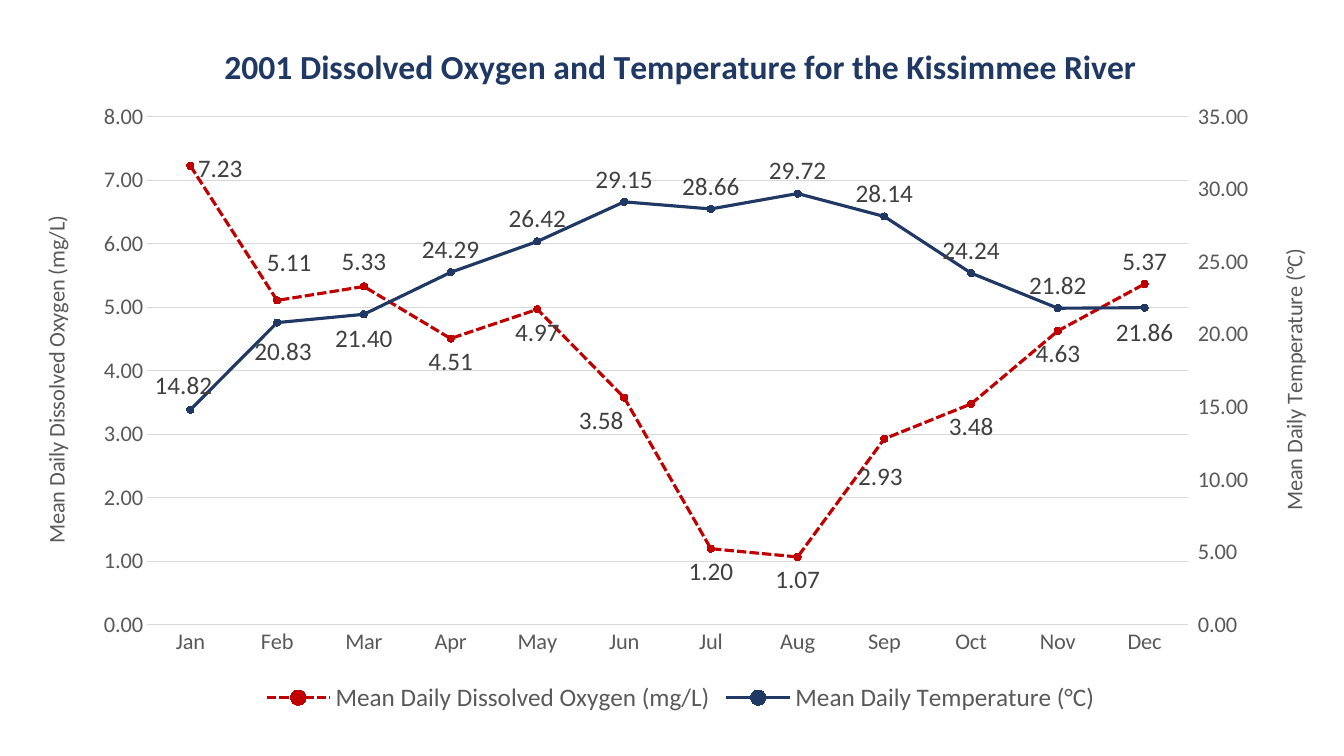
from copy import deepcopy
from dataclasses import dataclass, field

from lxml import etree
from pptx import Presentation
from pptx.chart.axis import CategoryAxis, ValueAxis
from pptx.chart.chart import Chart
from pptx.chart.data import CategoryChartData
from pptx.chart.series import LineSeries
from pptx.dml.color import RGBColor
from pptx.enum.chart import XL_CHART_TYPE as ChartType
from pptx.enum.chart import XL_LABEL_POSITION as Position
from pptx.enum.chart import XL_LEGEND_POSITION as LegendPosition
from pptx.enum.chart import XL_MARKER_STYLE as MarkerStyle
from pptx.enum.chart import XL_TICK_MARK as TickMark
from pptx.enum.dml import MSO_LINE_DASH_STYLE as Dash
from pptx.oxml.ns import qn
from pptx.text.text import Font
from pptx.util import Emu, Pt


@dataclass(frozen=True)
class Theme:
    font: str = "Calibri"
    navy: str = "203864"
    slate: str = "333F50"
    red: str = "C00000"
    white: str = "FFFFFF"
    black: str = "000000"
    text: str = "595959"
    label: str = "404040"
    grid: str = "D9D9D9"
    base_size: int = 10
    axis_size: int = 16
    label_size: int = 18
    title_size: int = 24
    series_line: float = 2.25
    thin_line: float = 0.75
    marker_size: int = 5


@dataclass(frozen=True)
class Box:
    left: int
    top: int
    width: int
    height: int


@dataclass(frozen=True)
class PointLabel:
    position: Position
    shift_x: int = 0
    shift_y: int = 0


@dataclass(frozen=True)
class Measure:
    name: str
    values: tuple[float, ...]
    color: str
    marker_edge: str
    dash: Dash
    position: Position
    axis_maximum: int
    axis_step: int
    tick: TickMark
    moved: dict[int, PointLabel] = field(default_factory=dict)


THEME = Theme()
EMU_PER_PX = 914400 / 100.8
SLIDE = Box(0, 0, 1344, 756)
FRAME = Box(23, 19, 1315, 699)
PLOT = Box(147, 117, 1041, 508)
TITLE = "2001 Dissolved Oxygen and Temperature for the Kissimmee River"
MONTHS = "Jan Feb Mar Apr May Jun Jul Aug Sep Oct Nov Dec".split()
OXYGEN = Measure(
    "Mean Daily Dissolved Oxygen (mg/L)",
    (7.23, 5.11, 5.33, 4.51, 4.97, 3.58, 1.2, 1.07, 2.93, 3.48, 4.63, 5.37),
    THEME.red, THEME.white, Dash.SQUARE_DOT, Position.BELOW, 8, 1, TickMark.NONE,
    {
        0: PointLabel(Position.RIGHT, 0, 3),
        1: PointLabel(Position.ABOVE, 12, -15),
        2: PointLabel(Position.ABOVE, 0, -2),
        5: PointLabel(Position.BELOW, -23, 0),
        8: PointLabel(Position.BELOW, -4, 15),
        11: PointLabel(Position.ABOVE),
    },
)
TEMPERATURE = Measure(
    "Mean Daily Temperature (°C)",
    (14.82, 20.83, 21.4, 24.29, 26.42, 29.15, 28.66, 29.72, 28.14, 24.24, 21.82, 21.86),
    THEME.navy, THEME.slate, Dash.SOLID, Position.ABOVE, 35, 5, TickMark.OUTSIDE,
    {
        0: PointLabel(Position.ABOVE, -7, -2),
        1: PointLabel(Position.BELOW, 6, 6),
        2: PointLabel(Position.BELOW, 0, 2),
        11: PointLabel(Position.BELOW, 0, 2),
    },
)


def px(length: int) -> Emu:
    return Emu(round(length * EMU_PER_PX))


def rgb(color: str) -> RGBColor:
    return RGBColor.from_string(color)


def style_font(font: Font, size: int, color: str, bold: bool = False) -> None:
    font.name, font.size, font.bold = THEME.font, Pt(size), bold
    font.color.rgb = rgb(color)


def manual_layout(**settings: object) -> etree._Element:
    layout = etree.Element(qn("c:layout"))
    manual = etree.SubElement(layout, qn("c:manualLayout"))
    for name, value in settings.items():
        etree.SubElement(manual, qn(f"c:{name}")).set("val", str(value))
    return layout


def place_plot(chart: Chart) -> None:
    area = chart._chartSpace.chart.plotArea
    for layout in area.findall(qn("c:layout")):
        area.remove(layout)
    area.insert(0, manual_layout(
        layoutTarget="inner", xMode="edge", yMode="edge",
        x=(PLOT.left - FRAME.left) / FRAME.width,
        y=(PLOT.top - FRAME.top) / FRAME.height,
        w=PLOT.width / FRAME.width,
        h=PLOT.height / FRAME.height,
    ))


def add_right_axis(chart: Chart) -> ValueAxis:
    """Move the second series to its own line plot with a value axis on the right."""
    area = chart._chartSpace.chart.plotArea
    left_plot = area.find(qn("c:lineChart"))
    right_plot = deepcopy(left_plot)
    left_plot.remove(left_plot.findall(qn("c:ser"))[1])
    right_plot.remove(right_plot.findall(qn("c:ser"))[0])
    left_plot.addnext(right_plot)

    category, value = (deepcopy(area.find(qn(tag))) for tag in ("c:catAx", "c:valAx"))
    ids = ("50010", "50020")
    for axis_id, number in zip(right_plot.findall(qn("c:axId")), ids):
        axis_id.set("val", number)
    for axis, own, other in ((category, *ids), (value, *reversed(ids))):
        axis.find(qn("c:axId")).set("val", own)
        axis.find(qn("c:crossAx")).set("val", other)
        axis.find(qn("c:crosses")).set("val", "max")
    value.find(qn("c:axPos")).set("val", "r")
    area.find(qn("c:valAx")).addnext(value)
    value.addnext(category)
    CategoryAxis(category).visible = False
    return ValueAxis(value)


def style_title(title_holder: object, text: str, size: int, color: str, bold: bool) -> None:
    paragraph = title_holder.text_frame.paragraphs[0]
    paragraph.text = text
    style_font(paragraph.runs[0].font, size, color, bold)


def style_value_axis(axis: ValueAxis, measure: Measure, gridlines: bool) -> None:
    axis.minimum_scale, axis.maximum_scale = 0, measure.axis_maximum
    axis.major_unit = measure.axis_step
    axis.major_tick_mark, axis.minor_tick_mark = measure.tick, TickMark.NONE
    axis.format.line.fill.background()
    axis.has_major_gridlines = gridlines
    if gridlines:
        line = axis.major_gridlines.format.line
        line.color.rgb, line.width = rgb(THEME.grid), Pt(THEME.thin_line)
    labels = axis.tick_labels
    labels.number_format, labels.number_format_is_linked = "0.00", False
    style_font(labels.font, THEME.axis_size, THEME.text)
    style_title(axis.axis_title, measure.name, THEME.axis_size, THEME.text, False)
    body = axis.axis_title.text_frame._txBody.bodyPr
    body.set("rot", "-5400000")
    body.set("vert", "horz")


def style_category_axis(axis: CategoryAxis) -> None:
    axis.major_tick_mark = axis.minor_tick_mark = TickMark.NONE
    axis.has_major_gridlines = False
    axis.format.line.color.rgb = rgb(THEME.grid)
    axis.format.line.width = Pt(THEME.thin_line)
    style_font(axis.tick_labels.font, THEME.axis_size, THEME.text)


def style_series(series: LineSeries, measure: Measure) -> None:
    series.smooth = False
    line, marker = series.format.line, series.marker
    line.color.rgb, line.width = rgb(measure.color), Pt(THEME.series_line)
    line.dash_style = measure.dash
    marker.style, marker.size = MarkerStyle.CIRCLE, THEME.marker_size
    marker.format.fill.solid()
    marker.format.fill.fore_color.rgb = rgb(measure.color)
    marker.format.line.color.rgb = rgb(measure.marker_edge)

    labels = series.data_labels
    labels.show_value, labels.position = True, measure.position
    labels.number_format, labels.number_format_is_linked = "0.00", False
    style_font(labels.font, THEME.label_size, THEME.label)
    for leader_lines in series._element.xpath("c:dLbls/c:showLeaderLines"):
        leader_lines.set("val", "0")
    for index, moved in measure.moved.items():
        label = series.points[index].data_label
        label.position = moved.position
        style_font(label.font, THEME.label_size, THEME.label)
        if moved.shift_x or moved.shift_y:
            number = series._element.xpath(f"c:dLbls/c:dLbl/c:idx[@val='{index}']")[0]
            number.addnext(manual_layout(
                x=moved.shift_x / FRAME.width, y=moved.shift_y / FRAME.height))


def add_river_chart(slide: object) -> None:
    data = CategoryChartData(number_format="0.00")
    data.categories = MONTHS
    for measure in (OXYGEN, TEMPERATURE):
        data.add_series(measure.name, measure.values)
    bounds = (px(n) for n in (FRAME.left, FRAME.top, FRAME.width, FRAME.height))
    chart = slide.shapes.add_chart(ChartType.LINE_MARKERS, *bounds, data).chart
    style_font(chart.font, THEME.base_size, THEME.black)
    chart.has_title = True
    style_title(chart.chart_title, TITLE, THEME.title_size, THEME.navy, True)
    chart.has_legend = True
    chart.legend.position = LegendPosition.BOTTOM
    chart.legend.include_in_layout = False
    style_font(chart.legend.font, THEME.label_size, THEME.text)

    chart.plots[0].vary_by_categories = False
    left_axis = chart.value_axis
    right_axis = add_right_axis(chart)
    place_plot(chart)
    style_category_axis(chart.category_axis)
    style_value_axis(left_axis, OXYGEN, gridlines=True)
    style_value_axis(right_axis, TEMPERATURE, gridlines=False)
    for plot, measure in zip(chart.plots, (OXYGEN, TEMPERATURE)):
        style_series(plot.series[0], measure)


def main() -> None:
    presentation = Presentation()
    presentation.slide_width, presentation.slide_height = px(SLIDE.width), px(SLIDE.height)
    add_river_chart(presentation.slides.add_slide(presentation.slide_layouts[6]))
    presentation.save("out.pptx")


if __name__ == "__main__":
    main()
